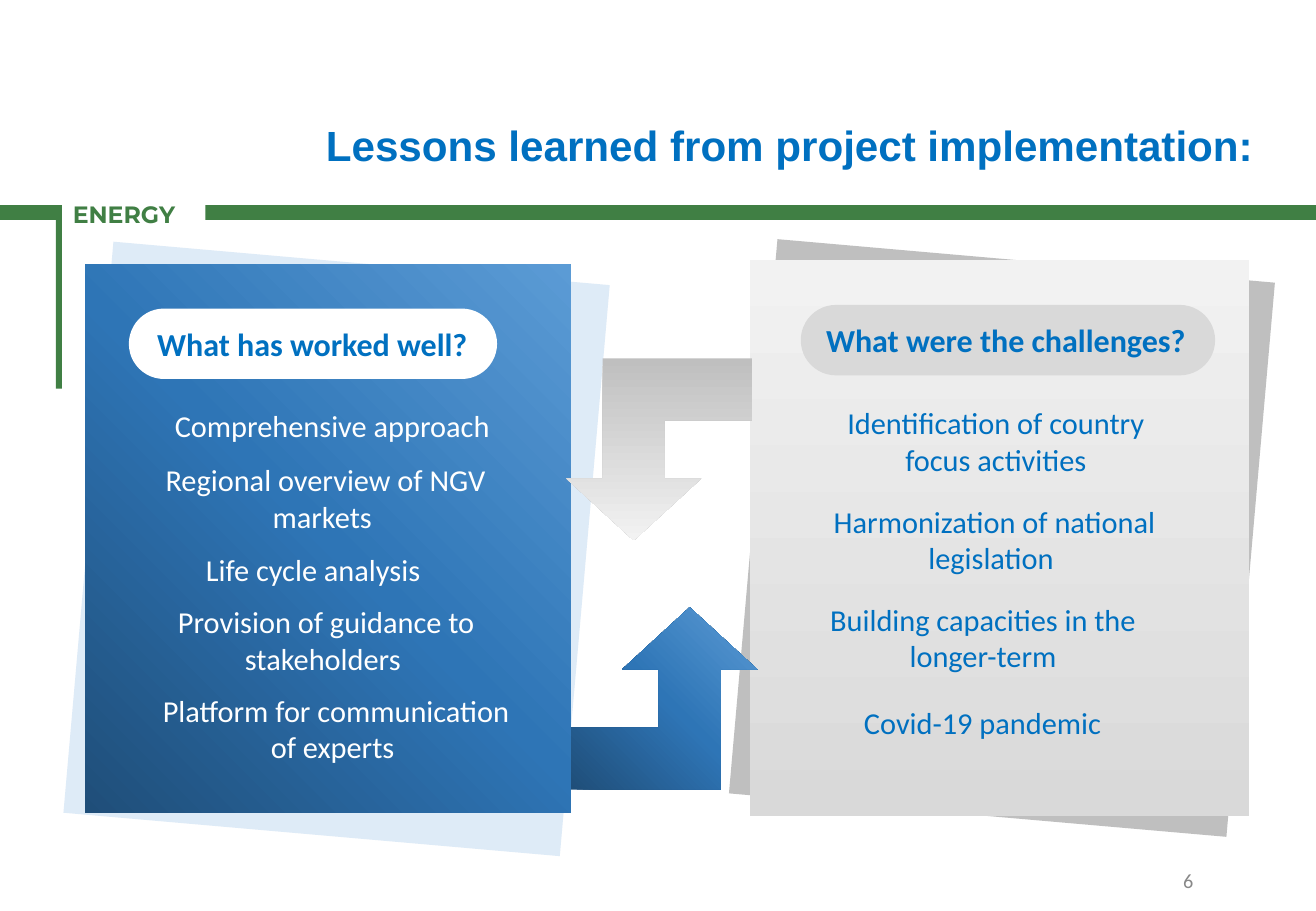
import copy
import dataclasses
import typing

import pptx
import pptx.dml.color
import pptx.enum.shapes
import pptx.enum.text
import pptx.oxml.ns
import pptx.util

Shape = pptx.enum.shapes.MSO_SHAPE
Align = pptx.enum.text.PP_ALIGN
Anchor = pptx.enum.text.MSO_ANCHOR
Fit = pptx.enum.text.MSO_AUTO_SIZE

PAGE_WIDTH = pptx.util.Inches(10.83)
PAGE_HEIGHT = pptx.util.Inches(7.5)


@dataclasses.dataclass(frozen=True)
class Style:
    size: float
    color: str
    font: str = "Calibri"
    bold: bool = False
    align: typing.Any = Align.CENTER


@dataclasses.dataclass(frozen=True)
class Gradient:
    stops: tuple[str, ...]
    angle: float


@dataclasses.dataclass(frozen=True)
class Theme:
    green: str = "407F44"
    white: str = "FFFFFF"
    pale_blue: str = "DEEBF7"
    mid_gray: str = "BFBFBF"
    light_gray: str = "D9D9D9"
    blues: Gradient = Gradient(("1F4E79", "2E75B6", "5B9BD5"), 45)
    panel_grays: Gradient = Gradient(("D9D9D9", "F2F2F2"), 90)
    arrow_grays: Gradient = Gradient(("BFBFBF", "F2F2F2"), 90)
    title: Style = Style(25, "0070C0", "Arial", True, Align.RIGHT)
    tag: Style = Style(14, "407F44", "Montserrat", True, Align.LEFT)
    heading: Style = Style(19, "0070C0", bold=True, align=Align.RIGHT)
    on_blue: Style = Style(18, "FFFFFF")
    on_gray: Style = Style(18, "0070C0")
    page_number: Style = Style(12, "888888", align=Align.RIGHT)


THEME = Theme()
Fill = str | Gradient


@dataclasses.dataclass(frozen=True)
class Area:
    """Left, top, width and height in percent of the slide."""
    left: float
    top: float
    width: float
    height: float

    def lengths(self) -> tuple[int, int, int, int]:
        return (
            int(PAGE_WIDTH * self.left / 100),
            int(PAGE_HEIGHT * self.top / 100),
            int(PAGE_WIDTH * self.width / 100),
            int(PAGE_HEIGHT * self.height / 100),
        )


@dataclasses.dataclass(frozen=True)
class Item:
    text: str
    left: float
    top: float
    width: float
    lines: int = 2

    def area(self) -> Area:
        return Area(self.left, self.top, self.width, 1.2 + 4.13 * self.lines)


@dataclasses.dataclass(frozen=True)
class Panel:
    back: Area
    back_fill: str
    front: Area
    front_fill: Gradient
    pill: Area
    pill_fill: str
    heading: str
    style: Style
    items: tuple[Item, ...]


PANELS = (
    Panel(
        Area(6.65, 28.8, 37.86, 62.93), THEME.pale_blue,
        Area(6.46, 29.07, 36.93, 60.13), THEME.blues,
        Area(9.79, 33.87, 27.98, 7.73), THEME.white,
        "What has worked well? ", THEME.on_blue,
        (
            Item("Comprehensive approach", 9.51, 44, 31.49, 1),
            Item("Regional overview of NGV markets ", 7.85, 50, 33.8),
            Item("Life cycle analysis ", 9.05, 59.87, 30.01, 1),
            Item("Provision of guidance to stakeholders ", 9.79, 65.6, 30.01),
            Item("Platform for communication of experts ", 10.53, 75.33, 30.01),
        ),
    ),
    Panel(
        Area(57.16, 28.53, 37.95, 61.07), THEME.mid_gray,
        Area(56.97, 28.53, 37.95, 61.07), THEME.panel_grays,
        Area(60.85, 33.47, 31.49, 7.73), THEME.light_gray,
        "What were the challenges? ", THEME.on_gray,
        (
            Item("Identification of country focus activities", 60.85, 43.73, 29.64),
            Item("Harmonization of national legislation ", 59.83, 54.53, 31.49),
            Item("Building capacities in the longer-term", 60.48, 65.33, 28.44),
            Item("Covid-19 pandemic ", 59.83, 76.67, 30.19, 1),
        ),
    ),
)

GREEN_BARS = (
    Area(15.6, 22.53, 84.4, 1.6),
    Area(0, 22.53, 4.71, 1.6),
    Area(4.25, 22.53, 0.46, 20.13),
)


def rgb(color: str) -> pptx.dml.color.RGBColor:
    return pptx.dml.color.RGBColor.from_string(color)


def write(box: typing.Any, text: str, style: Style, anchor: typing.Any = Anchor.TOP) -> None:
    frame = box.text_frame
    frame.word_wrap = True
    frame.vertical_anchor = anchor
    frame.text = text
    para = frame.paragraphs[0]
    para.alignment = style.align
    para.font.name = style.font
    para.font.size = pptx.util.Pt(style.size)
    para.font.bold = style.bold
    para.font.color.rgb = rgb(style.color)


def add_text(page: typing.Any, area: Area, text: str, style: Style,
             anchor: typing.Any = Anchor.TOP) -> None:
    write(page.shapes.add_textbox(*area.lengths()), text, style, anchor)


def paint(shape: typing.Any, fill: Fill) -> None:
    if isinstance(fill, str):
        shape.fill.solid()
        shape.fill.fore_color.rgb = rgb(fill)
        return
    shape.fill.gradient()
    shape.fill.gradient_angle = fill.angle
    stop_list = next(shape._element.spPr.iter(pptx.oxml.ns.qn("a:gsLst")))
    while len(stop_list) < len(fill.stops):
        stop_list.append(copy.deepcopy(stop_list[0]))
    for index, (stop, color) in enumerate(zip(shape.fill.gradient_stops, fill.stops)):
        stop.position = index / (len(fill.stops) - 1)
        stop.color.rgb = rgb(color)


def add_shape(page: typing.Any, area: Area, fill: Fill, kind: typing.Any = Shape.RECTANGLE,
              rotation: float = 0, adjustments: tuple[float, ...] = ()) -> typing.Any:
    shape = page.shapes.add_shape(kind, *area.lengths())
    shape.shadow.inherit = False
    shape.line.fill.background()
    shape.rotation = rotation
    for index, value in enumerate(adjustments):
        shape.adjustments[index] = value
    paint(shape, fill)
    return shape


def add_panel(page: typing.Any, panel: Panel) -> None:
    add_shape(page, panel.back, panel.back_fill, rotation=5)
    add_shape(page, panel.front, panel.front_fill)
    pill = add_shape(page, panel.pill, panel.pill_fill, Shape.ROUNDED_RECTANGLE, 0, (0.5,))
    write(pill, panel.heading, THEME.heading, Anchor.MIDDLE)
    for item in panel.items:
        add_text(page, item.area(), item.text, panel.style)


def main() -> None:
    deck = pptx.Presentation()
    deck.slide_width, deck.slide_height = PAGE_WIDTH, PAGE_HEIGHT
    page = deck.slides.add_slide(deck.slide_layouts[5])
    title = page.shapes.title
    title.left, title.top, title.width, title.height = Area(2.4, 12.4, 93.72, 6.93).lengths()
    write(title, "Lessons learned from project implementation:", THEME.title)
    title.text_frame.auto_size = Fit.NONE
    for bar in GREEN_BARS:
        add_shape(page, bar, THEME.green)
    add_text(page, Area(4.62, 21.33, 11.73, 5.47), "ENERGY", THEME.tag)
    for panel in PANELS:
        add_panel(page, panel)
    for left, top, rotation, fill in (
        (43.4, 66.67, 0, THEME.blues),
        (43.03, 39.33, 180, THEME.arrow_grays),
    ):
        add_shape(page, Area(left, top, 14.13, 20), fill, Shape.BENT_UP_ARROW,
                  rotation, (0.34, 0.37, 0.34))
    add_text(page, Area(69.07, 94, 22.53, 5.33), "6", THEME.page_number, Anchor.MIDDLE)
    deck.save("out.pptx")


if __name__ == "__main__":
    main()
